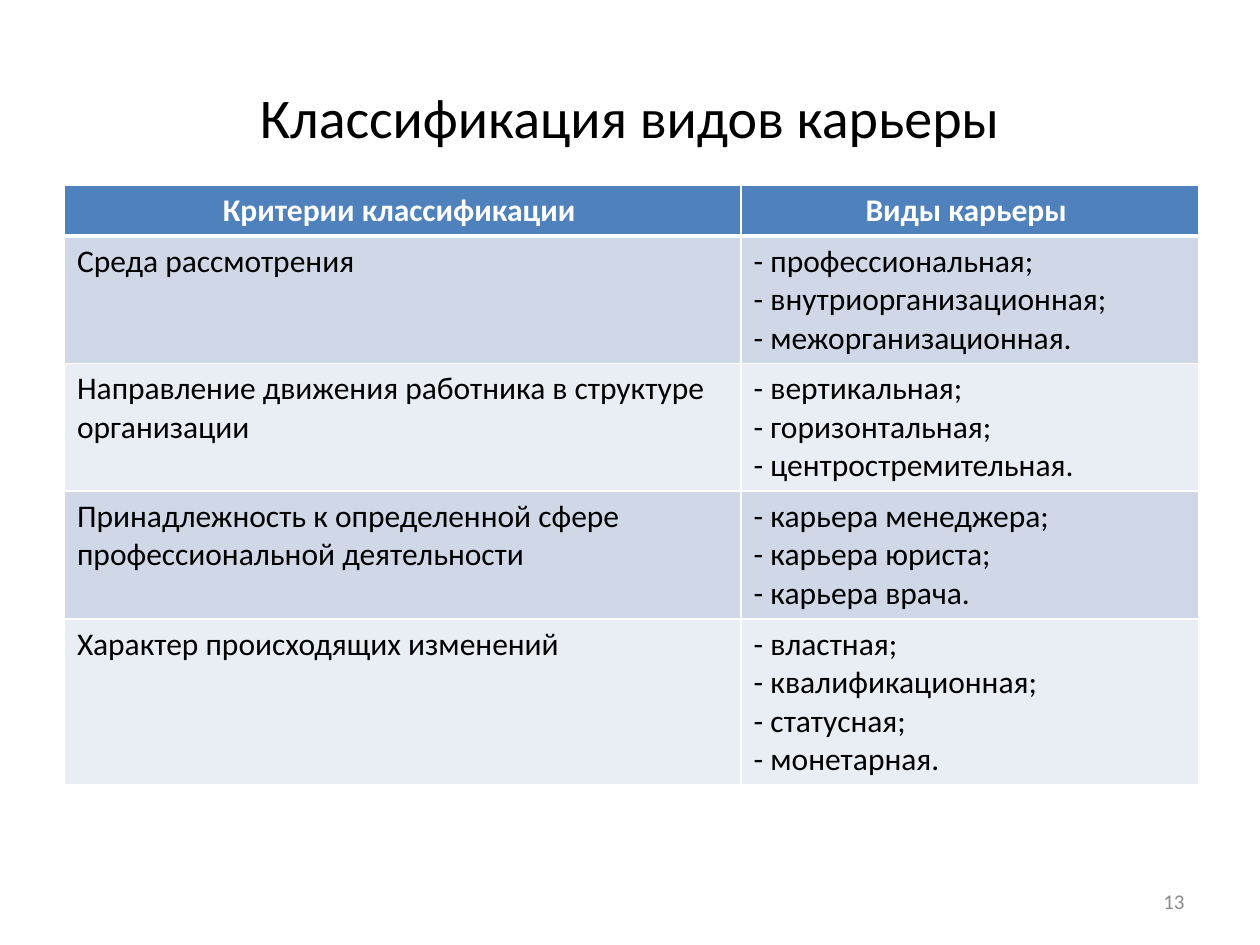
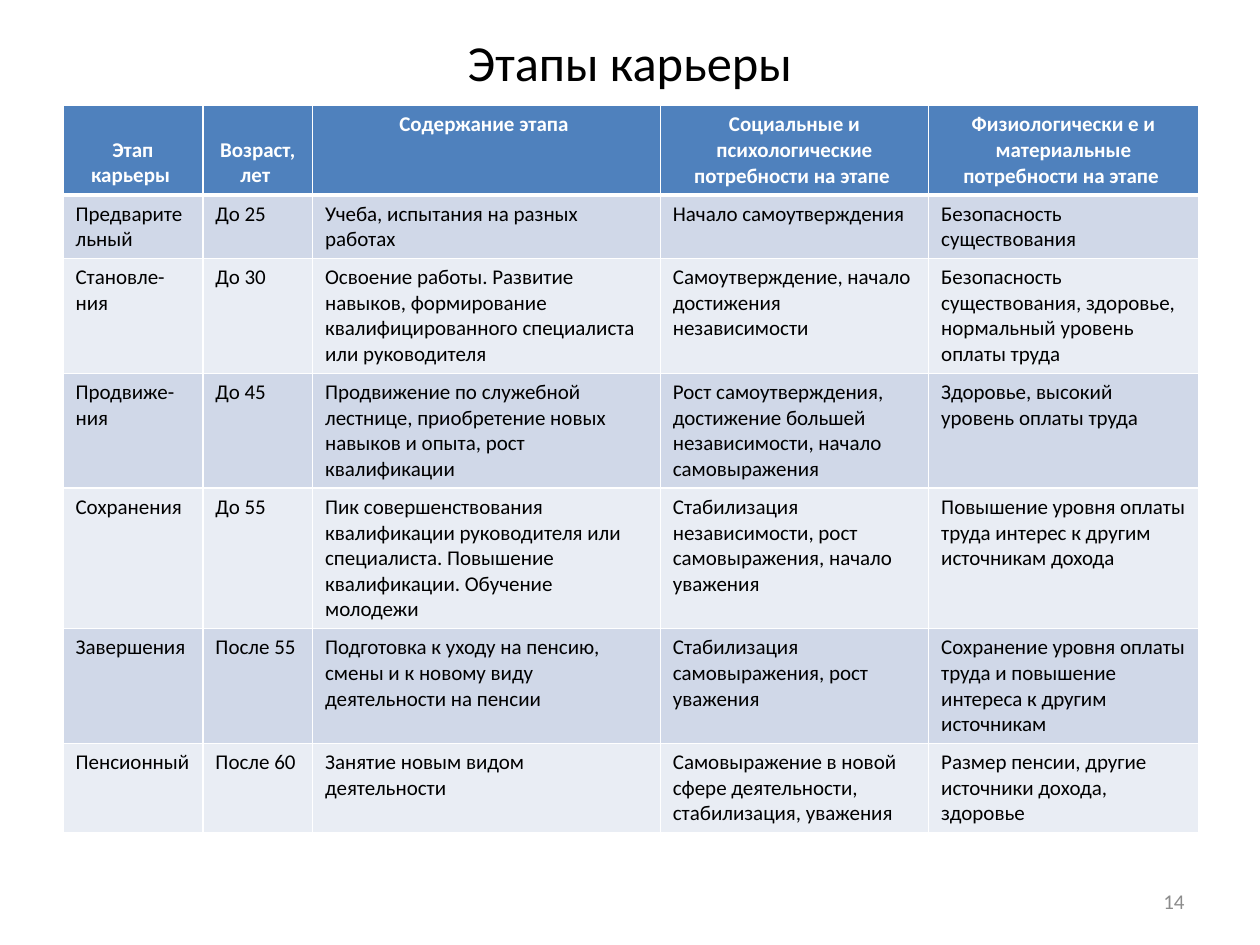
import pptx
import pptx.dml.color
import pptx.enum.text
import pptx.oxml
import pptx.oxml.ns
import pptx.util

Cm = pptx.util.Cm
Pt = pptx.util.Pt
RGBColor = pptx.dml.color.RGBColor
ALIGN = pptx.enum.text.PP_ALIGN
ANCHOR = pptx.enum.text.MSO_ANCHOR

BLACK = RGBColor(0x00, 0x00, 0x00)
WHITE = RGBColor(0xFF, 0xFF, 0xFF)
GREY = RGBColor(0x8C, 0x8C, 0x8C)
HEADER_BLUE = RGBColor(0x4F, 0x81, 0xBD)
BANDS = (RGBColor(0xD0, 0xD8, 0xE8), RGBColor(0xE9, 0xED, 0xF4))

FONT = "Calibri"
LINE_SPACING = 1.22
CELL_PADDING = Cm(0.25)
THIN, THICK = Pt(1), Pt(3)

CAREER_TYPES = [
    ["Критерии классификации ", "Виды карьеры "],
    ["Среда рассмотрения",
     "- профессиональная;\n- внутриорганизационная;\n- межорганизационная."],
    ["Направление движения работника в структуре организации",
     "- вертикальная;\n- горизонтальная;\n- центростремительная."],
    ["Принадлежность к определенной сфере профессиональной деятельности",
     "- карьера менеджера;\n- карьера юриста;\n- карьера врача."],
    ["Характер происходящих изменений",
     "- властная;\n- квалификационная;\n- статусная;\n- монетарная."],
]

CAREER_STAGES = [
    ["Этап карьеры ", "Возраст, лет ", "Содержание этапа ",
     "Социальные и психологические потребности на этапе ",
     "Физиологически е и материальные потребности на этапе "],
    ["Предварительный", "До 25", "Учеба, испытания на разных работах",
     "Начало самоутверждения", "Безопасность существования"],
    ["Становле-ния", "До 30",
     "Освоение работы. Развитие навыков, формирование "
     "квалифицированного специалиста или руководителя",
     "Самоутверждение, начало достижения независимости",
     "Безопасность существования, здоровье, нормальный уровень оплаты труда"],
    ["Продвиже-ния", "До 45",
     "Продвижение по служебной лестнице, приобретение новых навыков "
     "и опыта, рост квалификации",
     "Рост самоутверждения, достижение большей независимости, "
     "начало самовыражения",
     "Здоровье, высокий уровень оплаты труда"],
    ["Сохранения", "До 55",
     "Пик совершенствования квалификации руководителя или специалиста. "
     "Повышение квалификации. Обучение молодежи",
     "Стабилизация независимости, рост самовыражения, начало уважения",
     "Повышение уровня оплаты труда интерес к другим источникам дохода"],
    ["Завершения", "После 55",
     "Подготовка к уходу на пенсию, смены и к новому виду "
     "деятельности на пенсии",
     "Стабилизация самовыражения, рост уважения",
     "Сохранение уровня оплаты труда и повышение интереса "
     "к другим источникам"],
    ["Пенсионный", "После 60", "Занятие новым видом деятельности",
     "Самовыражение в новой сфере деятельности, стабилизация, уважения",
     "Размер пенсии, другие источники дохода, здоровье"],
]


class CareerDeck:
    """Holds the shared style and the slide being filled."""

    def __init__(self):
        self.deck = pptx.Presentation()
        self.deck.slide_width = Cm(25.4)
        self.deck.slide_height = Cm(19.05)
        self.page = None

    def add_page(self, title, title_height, title_size, number):
        self.page = self.deck.slides.add_slide(self.deck.slide_layouts[6])
        self.add_text(title, (1.27, 0.76, 22.86, title_height), ALIGN.CENTER,
                      {"size": Pt(title_size)}, BLACK)
        self.add_text(str(number), (18.2, 17.66, 5.93, 1.01), ALIGN.RIGHT,
                      {"size": Pt(12)}, GREY)

    def style_text(self, frame, align, font_values, color):
        for para in frame.paragraphs:
            para.alignment = align
            for span in para.runs:
                for name, value in {"name": FONT, **font_values}.items():
                    setattr(span.font, name, value)
                span.font.color.rgb = color

    def add_text(self, text, place, align, font_values, color):
        box = self.page.shapes.add_textbox(*map(Cm, place))
        frame = box.text_frame
        frame.word_wrap = True
        frame.vertical_anchor = ANCHOR.MIDDLE
        frame.text = text
        self.style_text(frame, align, font_values, color)

    def add_table(self, rows, left, top, column_widths, line_counts, size,
                  low_headers=()):
        """Row heights follow line_counts; low_headers are bottom-anchored columns."""
        heights = [int(Pt(size) * LINE_SPACING * lines + CELL_PADDING)
                   for lines in line_counts]
        widths = [Cm(width) for width in column_widths]
        table = self.page.shapes.add_table(
            len(rows), len(widths), Cm(left), Cm(top),
            sum(widths), sum(heights)).table
        for column, width in zip(table.columns, widths):
            column.width = width
        for row, height in zip(table.rows, heights):
            row.height = height
        for row_index, texts in enumerate(rows):
            for column_index, text in enumerate(texts):
                cell = table.cell(row_index, column_index)
                cell.text = text
                self.style_cell(cell, row_index, size)
                if row_index == 0 and column_index in low_headers:
                    cell.vertical_anchor = ANCHOR.BOTTOM

    def style_cell(self, cell, row_index, size):
        header = row_index == 0
        self.add_borders(cell, {
            "L": THIN, "R": THIN,
            "T": THICK if row_index == 1 else THIN,
            "B": THICK if header else THIN})
        cell.fill.solid()
        cell.fill.fore_color.rgb = (
            HEADER_BLUE if header else BANDS[(row_index - 1) % len(BANDS)])
        self.style_text(cell.text_frame, ALIGN.CENTER if header else ALIGN.LEFT,
                        {"size": Pt(size), "bold": header},
                        WHITE if header else BLACK)

    def add_borders(self, cell, widths):
        """The border elements must come before the cell's fill."""
        properties = cell._tc.get_or_add_tcPr()
        for side, width in widths.items():
            properties.append(pptx.oxml.parse_xml(
                f'<a:ln{side} {pptx.oxml.ns.nsdecls("a")} w="{int(width)}">'
                f'<a:solidFill><a:srgbClr val="{WHITE}"/></a:solidFill>'
                f'</a:ln{side}>'))


def main():
    career = CareerDeck()

    career.add_page("Классификация видов карьеры", 3.18, 32, 13)
    career.add_table(CAREER_TYPES, 1.3, 3.73, (13.64, 9.22),
                     (1, 3, 3, 3, 4), 18)

    career.add_page("Этапы карьеры", 0.97, 28.8, 14)
    career.add_table(CAREER_STAGES, 1.27, 2.13, (2.82, 2.21, 7.01, 5.41, 5.44),
                     (3, 2, 4, 4, 5, 4, 3), 12, low_headers=(0, 1))

    career.deck.save("out.pptx")


if __name__ == "__main__":
    main()
